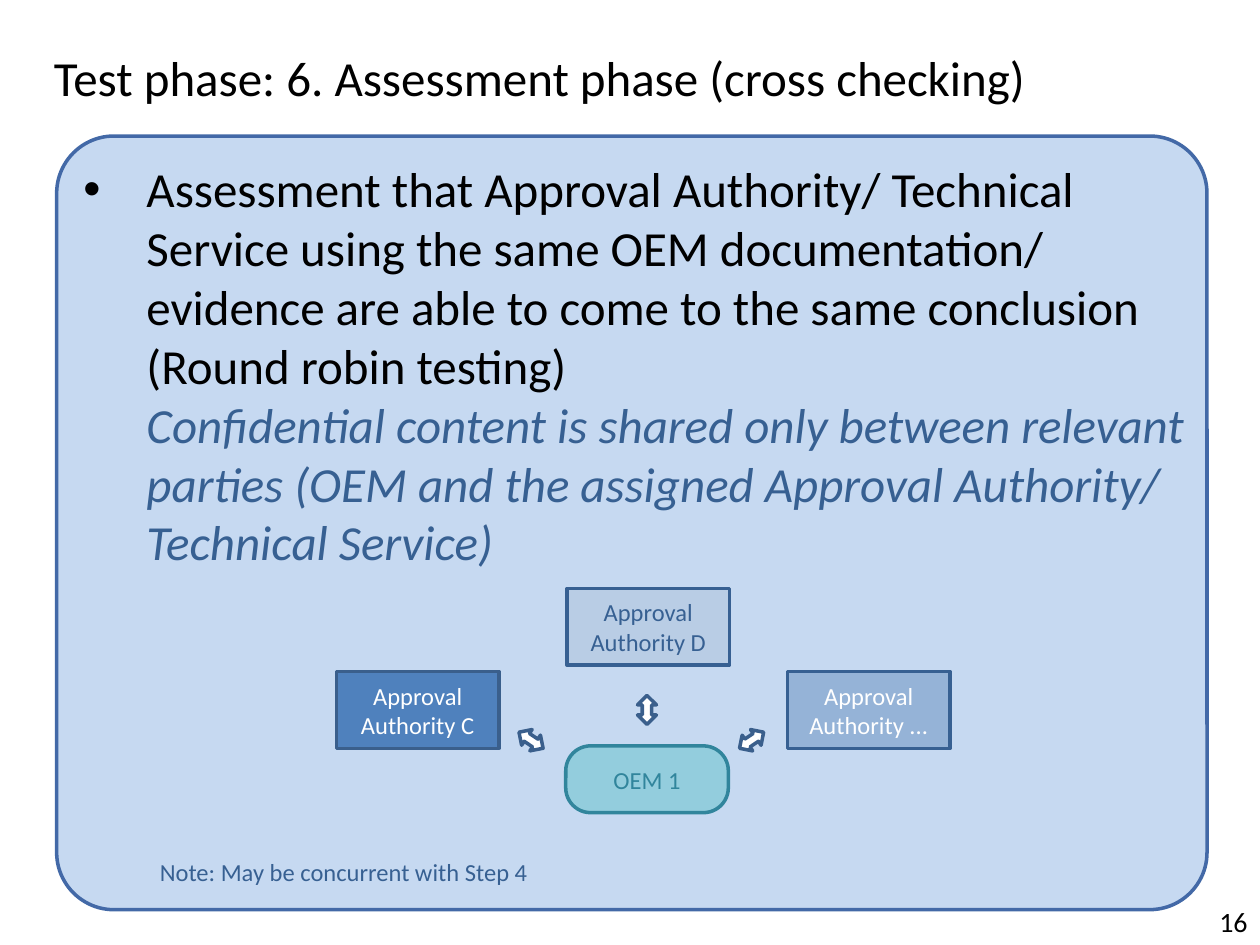
import pptx
import pptx.util
import pptx.dml.color
import pptx.enum.shapes
import pptx.enum.text
import pptx.oxml

Inches, Pt = pptx.util.Inches, pptx.util.Pt
KIND = pptx.enum.shapes.MSO_SHAPE
ALIGN = pptx.enum.text.PP_ALIGN
ANCHOR = pptx.enum.text.MSO_ANCHOR

HUES = {
    "black": "000000", "white": "FFFFFF", "panel": "C6D9F1",
    "frame": "4369A7", "navy": "376092", "edge": "3A5F8C",
    "blue": "4F81BD", "mid": "95B3D7", "pale": "B9CDE5",
    "aqua": "93CDDD", "teal": "31859C",
}

# Content
BODY = (
    "Assessment that Approval Authority/ Technical Service using the same "
    "OEM documentation/ evidence are able to come to the same conclusion\n"
    "(Round robin testing)\n"
    "Confidential content is shared only between relevant parties "
    "(OEM and the assigned Approval Authority/ Technical Service)"
)
# text, place, size, alignment
LABELS = [
    ("16", (8.33, 7.13, 1.67, 0.37), 16, ALIGN.RIGHT),
    ("Test phase: 6. Assessment phase (cross checking)",
     (0.33, 0.33, 9.17, 0.57), 28, ALIGN.LEFT),
    ("Note: May be concurrent with Step 4",
     (1.17, 6.75, 8, 0.34), 14, ALIGN.LEFT),
]
# text, left, top, fill, line, font colour
BOXES = [
    ("Approval Authority D", 4.5, 4.67, "pale", "navy", "navy"),
    ("Approval Authority C", 2.67, 5.33, "blue", "edge", "white"),
    ("Approval Authority ...", 6.25, 5.33, "mid", "navy", "white"),
]
# left, top, rotation
ARROWS = [(5.89, 5.76, 56.2), (5.06, 5.52, 0), (4.14, 5.76, 303.8)]

deck = pptx.Presentation()
deck.slide_width, deck.slide_height = Inches(10), Inches(7.5)
slide = deck.slides.add_slide(deck.slide_layouts[6])


def hue(name):
    return pptx.dml.color.RGBColor.from_string(HUES[name])


def write(shape, text, size, color, align):
    frame = shape.text_frame
    frame.word_wrap = True
    para = frame.paragraphs[0]
    para.text = text
    para.alignment = align
    for run in para.runs:
        run.font.name = "Calibri"
        run.font.size = Pt(size)
        run.font.color.rgb = hue(color)
    return para


def draw(kind, place, fill, line, adj=None):
    shape = slide.shapes.add_shape(kind, *map(Inches, place))
    shape.shadow.inherit = False
    shape.fill.solid()
    shape.fill.fore_color.rgb = hue(fill)
    shape.line.color.rgb = hue(line)
    shape.line.width = Pt(2)
    if adj is not None:
        shape.adjustments[0] = adj
    return shape


# Panel with the bulleted statement
panel = draw(KIND.ROUNDED_RECTANGLE, (0.45, 1.08, 9.13, 6.14),
             "panel", "frame", 0.074)
para = write(panel, BODY, 28, "black", ALIGN.LEFT)
frame = panel.text_frame
frame.vertical_anchor = ANCHOR.TOP
frame.margin_left, frame.margin_right = Inches(0.08), 0
para.space_before = Pt(5.6)
last = para.runs[-1].font
last.italic = True
last.color.rgb = hue("navy")
props = para._p.get_or_add_pPr()
props.set("marL", str(Inches(0.5)))
props.set("indent", str(-Inches(0.5)))
for tag, key, value in [("buFont", "typeface", "Arial"),
                        ("buChar", "char", "•")]:
    item = pptx.oxml.parse_xml(
        f'<a:{tag} xmlns:a="http://schemas.openxmlformats.org/'
        f'drawingml/2006/main" {key}="{value}"/>')
    props.append(item)

# Authorities around the manufacturer
for text, left, top, fill, line, color in BOXES:
    box = draw(KIND.RECTANGLE, (left, top, 1.29, 0.61), fill, line)
    write(box, text, 14, color, ALIGN.CENTER)
maker = draw(KIND.ROUNDED_RECTANGLE, (4.49, 5.92, 1.29, 0.53),
             "aqua", "teal", 0.372)
write(maker, "OEM 1", 14, "teal", ALIGN.CENTER)

# Two-way arrows
for left, top, turn in ARROWS:
    arrow = draw(KIND.UP_DOWN_ARROW, (left, top, 0.15, 0.23), "white", "edge")
    arrow.rotation = turn

# Title, note and page number
for text, place, size, align in LABELS:
    label = slide.shapes.add_textbox(*map(Inches, place))
    color = "navy" if size == 14 else "black"
    write(label, text, size, color, align)

deck.save("out.pptx")
